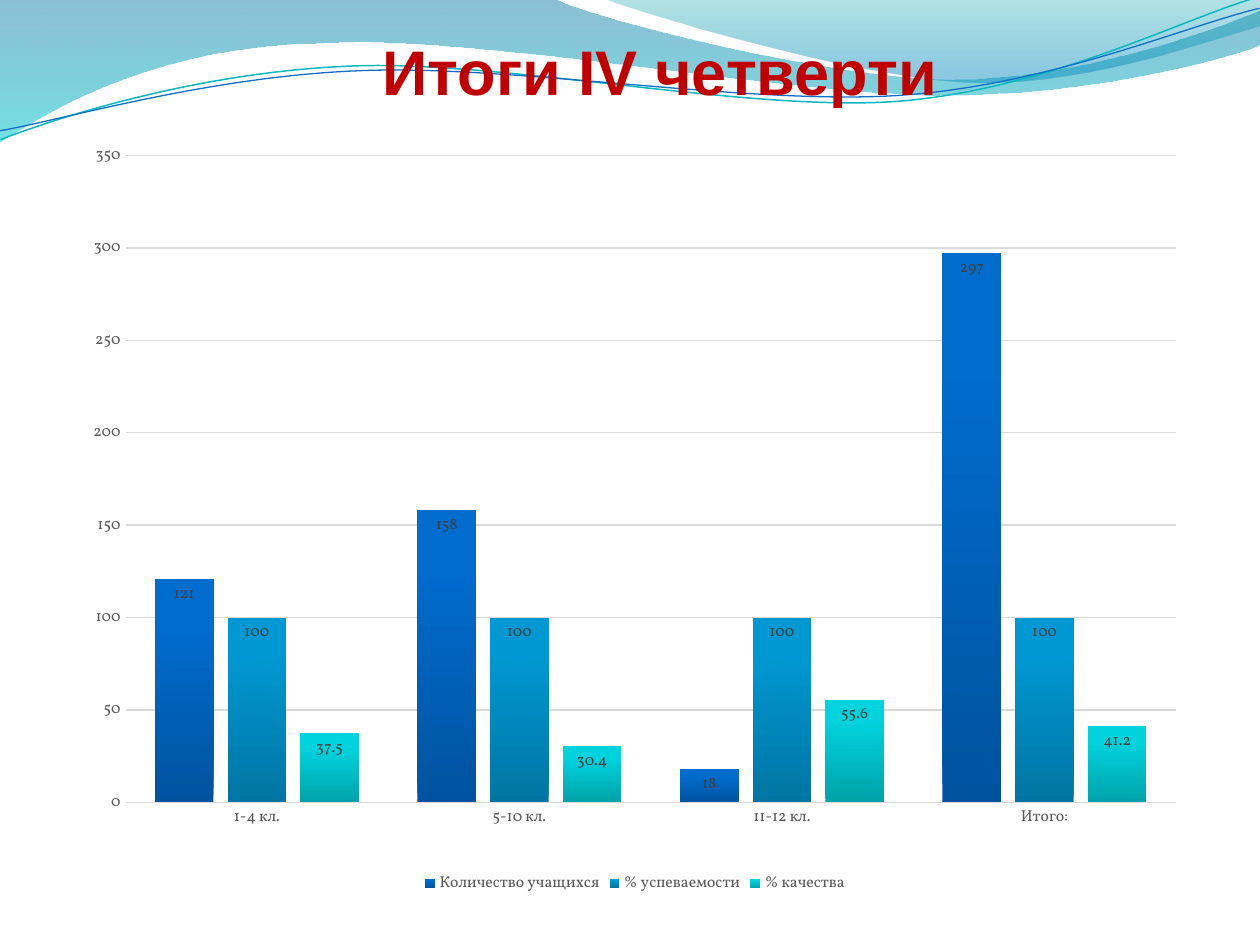
"""Build the slide with the fourth-quarter results chart under a wave header."""
from lxml import etree
from pptx import Presentation, util as u
from pptx.chart.data import CategoryChartData
from pptx.dml.color import RGBColor
from pptx.enum import chart as c, text
from pptx.oxml import parse_xml
from pptx.oxml.ns import nsdecls, qn

PX = 914400 / 126
rgb = RGBColor.from_string


def set_gradient(fill, element, angle, stops):
    fill.gradient()
    fill.gradient_angle = angle
    stop_list = element.find(".//" + qn("a:gsLst"))
    stop_list.clear()
    for position, color, opacity in stops:
        stop = etree.SubElement(stop_list, qn("a:gs"), pos=str(position * 1000))
        color_element = etree.SubElement(stop, qn("a:srgbClr"), val=color)
        if opacity < 100:
            etree.SubElement(color_element, qn("a:alpha"), val=str(opacity * 1000))


def add_curve(shapes, start, segments, close):
    """Segments hold one point for a line or three for a Bezier curve."""
    builder = shapes.build_freeform(*start, scale=PX)
    points = [pair for segment in segments for pair in zip(segment[::2], segment[1::2])]
    builder.add_line_segments(points, close=close)
    shape = builder.convert_to_shape()
    shape.shadow.inherit = False
    lines = iter(shape.element.findall(".//" + qn("a:lnTo")))
    for segment in segments:
        first = next(lines)
        if len(segment) == 6:
            first.tag = qn("a:cubicBezTo")
            for _ in range(2):
                control = next(lines)
                first.append(control[0])
                control.getparent().remove(control)
    return shape


presentation = Presentation()
presentation.slide_width = round(1260 * PX)
presentation.slide_height = round(945 * PX)
slide = presentation.slides.add_slide(presentation.slide_layouts[5])

waves = [
    ((0, 0), [(554, -1), (600, 21, 837, 79, 955, 79), (1075, 79, 1207, 33, 1260, 11),
              (1261, 45), (1239, 55, 1096, 96, 940, 95), (784, 95, 481, 35, 324, 43),
              (163, 45, 58, 105, -1, 142), (0, 0)],
     [(0, "0074A1", 45), (100, "00C6CF", 55)]),
    ((604, -1), [(641, 14, 859, 78, 969, 82), (1079, 87, 1211, 40, 1260, 26),
                 (1260, 0), (604, -1)],
     [(0, "00A1A9", 30), (80, "008BBF", 45)]),
]
for start, segments, stops in waves:
    wave = add_curve(slide.shapes, start, segments, True)
    set_gradient(wave.fill, wave.element, 270, stops)
    wave.line.fill.background()

strands = [
    ((-2, 110), [(58, 90, 199, 52, 350, 53), (499, 53, 745, 118, 896, 114),
                 (1048, 109, 1184, 45, 1260, 27)], "0AB8BF", 0.85),
    ((-2, 101), [(57, 94, 207, 57, 357, 58), (509, 58, 750, 112, 902, 108),
                 (1052, 104, 1188, 52, 1262, 38)], "0F6FC6", 0.75),
]
for start, segments, color, width in strands:
    strand = add_curve(slide.shapes, start, segments, False)
    strand.rotation = 357.3
    strand.fill.background()
    strand.line.color.rgb = rgb(color)
    strand.line.width = u.Pt(width)

title = slide.shapes.title
title.element.getparent().append(title.element)
title.left, title.top, title.width, title.height = [round(n * PX) for n in (313, 26, 694, 89)]
title.text_frame.vertical_anchor = text.MSO_ANCHOR.MIDDLE
paragraph = title.text_frame.paragraphs[0]
paragraph.alignment = text.PP_ALIGN.CENTER
run = paragraph.add_run()
run.text = "Итоги IV четверти"
run.font.name, run.font.size, run.font.bold = "Arial", u.Pt(36), True
run.font.color.rgb = rgb("C00000")

series_table = [
    ("Количество учащихся", (121, 158, 18, 297), ("00539F", "006CCE", "006DCF")),
    ("% успеваемости", (100, 100, 100, 100), ("0075A2", "0098D2", "0099D3")),
    ("% качества", (37.5, 30.4, 55.6, 41.2), ("00A3AA", "00D3DD", "00D4DE")),
]
data = CategoryChartData()
data.categories = ["1-4 кл.", "5-10 кл.", "11-12 кл.", "Итого:"]
for name, values, _ in series_table:
    data.add_series(name, values)
frame = [round(n * PX) for n in (74, 145, 1122, 754)]
chart = slide.shapes.add_chart(c.XL_CHART_TYPE.COLUMN_CLUSTERED, *frame, data).chart
chart.has_title = False
chart.has_legend = True
chart.legend.position = c.XL_LEGEND_POSITION.BOTTOM
chart.legend.include_in_layout = False
chart.font.name, chart.font.size = "Vollkorn", u.Pt(10)
chart.font.color.rgb = rgb("000000")

plot = chart.plots[0]
plot.gap_width, plot.overlap, plot.vary_by_categories = 100, -24, False
fonts = [(chart.legend.font, "595959"), (chart.category_axis.tick_labels.font, "595959"),
         (chart.value_axis.tick_labels.font, "595959")]
for series, (_, _, colors) in zip(plot.series, series_table):
    stops = [(position, color, 100) for position, color in zip((0, 80, 100), colors)]
    set_gradient(series.format.fill, series._element, 90, stops)
    labels = series.data_labels
    labels.show_value = True
    labels.position = c.XL_LABEL_POSITION.INSIDE_END
    fonts.append((labels.font, "404040"))
for font, color in fonts:
    font.name, font.size = "Vollkorn", u.Pt(9)
    font.color.rgb = rgb(color)

for axis in (chart.category_axis, chart.value_axis):
    axis.major_tick_mark = axis.minor_tick_mark = c.XL_TICK_MARK.NONE
chart.category_axis.format.line.color.rgb = rgb("D9D9D9")
chart.category_axis.format.line.width = u.Pt(1)
value_axis = chart.value_axis
value_axis.minimum_scale, value_axis.maximum_scale, value_axis.major_unit = 0, 350, 50
value_axis.format.line.fill.background()
value_axis.major_gridlines.format.line.color.rgb = rgb("D9D9D9")
value_axis.major_gridlines.format.line.width = u.Pt(0.75)

plot_area = chart._chartSpace.find(".//" + qn("c:plotArea"))
for old_layout in plot_area.findall(qn("c:layout")):
    plot_area.remove(old_layout)
plot_area.insert(0, parse_xml(
    f'<c:layout {nsdecls("c")}><c:manualLayout><c:layoutTarget val="inner"/>'
    '<c:xMode val="edge"/><c:yMode val="edge"/><c:x val="0.046"/><c:y val="0.014"/>'
    '<c:w val="0.936"/><c:h val="0.858"/></c:manualLayout></c:layout>'))

presentation.save("out.pptx")
